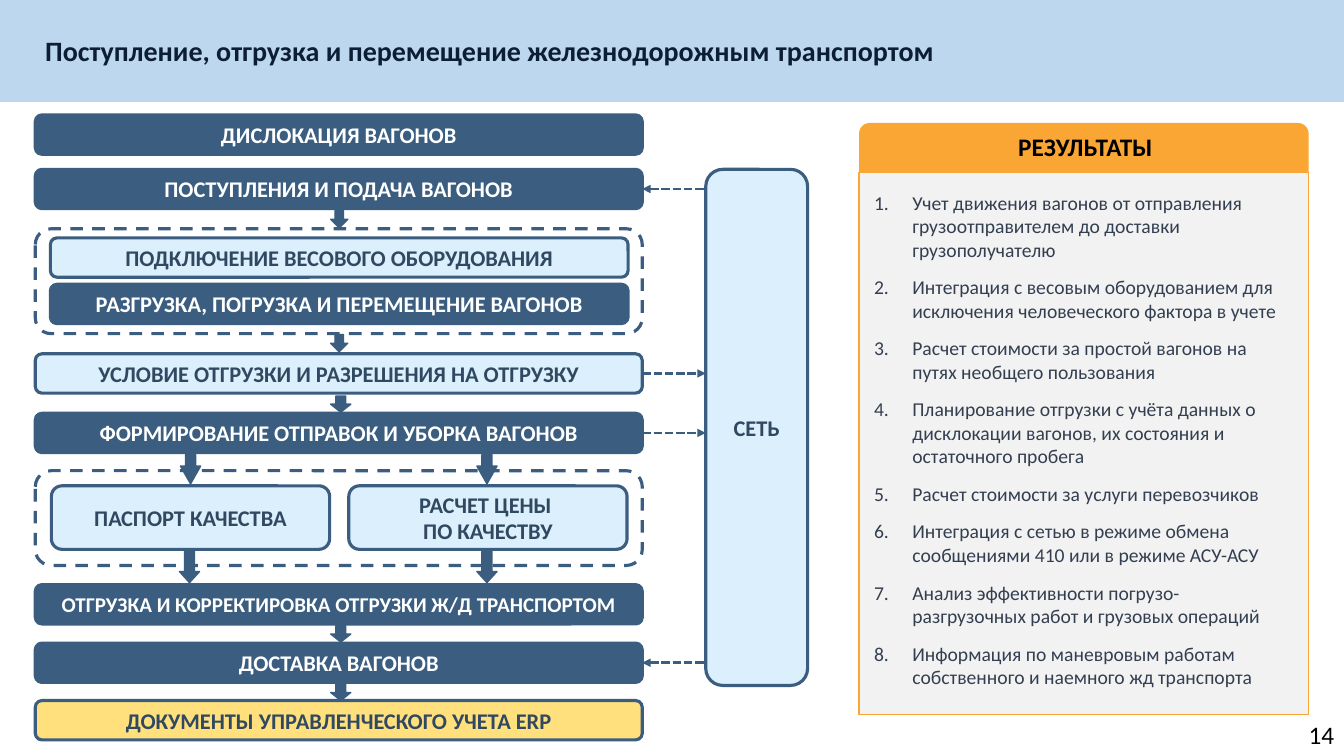
from typing import NamedTuple, Optional

from pptx import Presentation
from pptx.dml.color import RGBColor
from pptx.enum.dml import MSO_LINE
from pptx.enum.shapes import MSO_CONNECTOR, MSO_SHAPE
from pptx.enum.text import MSO_ANCHOR, PP_ALIGN
from pptx.oxml.ns import qn
from pptx.util import Inches, Pt
from lxml.etree import SubElement

NAVY, PALE, YELLOW, ORANGE = "3A5D80", "DBF0FC", "FFE07D", "FAA634"
WHITE, BLACK, SLATE = "FFFFFF", "000000", "304961"
FULL_X, FULL_W = 0.35, 6.02
INNER_X, INNER_W = 0.5, 5.73
BAR_H = 0.39


class Step(NamedTuple):
    text: str
    y: float
    fill: str = NAVY
    x: float = FULL_X
    w: float = FULL_W
    h: float = BAR_H
    size: float = 16
    link: str = ""  # which end of the exchange line has the arrowhead


class Arrow(NamedTuple):
    x: float
    y: float
    w: float
    h: float
    head: float = 0.5


class Frame(NamedTuple):
    y: float
    h: float
    radius: float


STEPS = [
    Step("ДИСЛОКАЦИЯ ВАГОНОВ", 1.14),
    Step("ПОСТУПЛЕНИЯ И ПОДАЧА ВАГОНОВ", 1.68, link="headEnd"),
    Step("ПОДКЛЮЧЕНИЕ ВЕСОВОГО ОБОРУДОВАНИЯ", 2.36, PALE, INNER_X, INNER_W),
    Step("РАЗГРУЗКА, ПОГРУЗКА И ПЕРЕМЕЩЕНИЕ ВАГОНОВ", 2.82, NAVY, INNER_X, INNER_W),
    Step("УСЛОВИЕ ОТГРУЗКИ И РАЗРЕШЕНИЯ НА ОТГРУЗКУ", 3.51, PALE, link="tailEnd"),
    Step("ФОРМИРОВАНИЕ ОТПРАВОК И УБОРКА ВАГОНОВ", 4.1, link="tailEnd"),
    Step("ПАСПОРТ КАЧЕСТВА", 4.82, PALE, 0.51, 2.76, 0.63),
    Step("РАСЧЕТ ЦЕНЫ \nПО КАЧЕСТВУ", 4.82, PALE, 3.46, 2.76, 0.63),
    Step("ОТГРУЗКА И КОРРЕКТИРОВКА ОТГРУЗКИ Ж/Д ТРАНСПОРТОМ", 5.8, size=15),
    Step("ДОСТАВКА ВАГОНОВ", 6.38, link="headEnd"),
    Step("ДОКУМЕНТЫ УПРАВЛЕНЧЕСКОГО УЧЕТА ERP", 6.95, YELLOW),
]
EXCHANGE = Step("СЕТЬ", 1.68, PALE, 7, 1.01, 5.12)
FRAMES = [Frame(2.27, 1.04, 0.15), Frame(4.67, 0.94, 0.17)]
ARROWS = [
    *(Arrow(3.28, y, 0.17, 0.17) for y in (2.09, 3.32)),
    *(Arrow(3.28, y, 0.2, 0.16) for y in (3.93, 6.21, 6.79)),
    *(Arrow(x, 4.51, 0.2, 0.29, 0.88) for x in (1.79, 4.73)),
    *(Arrow(x, 5.47, 0.2, 0.31, 0.55) for x in (1.78, 4.73)),
]
RESULTS = [
    "Учет движения вагонов от отправления грузоотправителем до доставки грузополучателю",
    "Интеграция с весовым оборудованием для исключения человеческого фактора в учете",
    "Расчет стоимости за простой вагонов на путях необщего пользования",
    "Планирование отгрузки с учёта данных о дисклокации вагонов, их состояния и остаточного пробега",
    "Расчет стоимости за услуги перевозчиков",
    "Интеграция с сетью в режиме обмена сообщениями 410 или в режиме АСУ-АСУ",
    "Анализ эффективности погрузо-разгрузочных работ и грузовых операций",
    "Информация по маневровым работам собственного и наемного жд транспорта",
]


def rgb(color: str) -> RGBColor:
    return RGBColor.from_string(color)


def write(p, text: str, size: float, color: str, bold: bool = False,
          align: PP_ALIGN = PP_ALIGN.LEFT) -> None:
    p.text = text
    p.alignment = align
    for r in p.runs:
        for name, value in {"name": "Calibri", "size": Pt(size), "bold": bold}.items():
            setattr(r.font, name, value)
        r.font.color.rgb = rgb(color)


def add_box(s, kind: MSO_SHAPE, x: float, y: float, w: float, h: float,
            fill: Optional[str] = None, line: Optional[str] = None, weight: float = 2.25):
    sp = s.shapes.add_shape(kind, Inches(x), Inches(y), Inches(w), Inches(h))
    sp.shadow.inherit = False
    if fill:
        sp.fill.solid()
        sp.fill.fore_color.rgb = rgb(fill)
    else:
        sp.fill.background()
    if line:
        sp.line.color.rgb = rgb(line)
        sp.line.width = Pt(weight)
    else:
        sp.line.fill.background()
    return sp


def add_text(s, x: float, y: float, w: float, h: float):
    tf = s.shapes.add_textbox(Inches(x), Inches(y), Inches(w), Inches(h)).text_frame
    tf.word_wrap = True
    return tf


def add_step(s, step: Step):
    sp = add_box(s, MSO_SHAPE.ROUNDED_RECTANGLE, step.x, step.y, step.w, step.h,
                 step.fill, NAVY)
    tf = sp.text_frame
    tf.word_wrap = True
    tf.vertical_anchor = MSO_ANCHOR.MIDDLE
    color = WHITE if step.fill == NAVY else SLATE
    write(tf.paragraphs[0], step.text, step.size, color, True, PP_ALIGN.CENTER)
    return sp


def add_link(s, bar, step: Step) -> None:
    """Join a step to the exchange system with a dashed arrow."""
    y = Inches(step.y + step.h / 2)
    line = s.shapes.add_connector(MSO_CONNECTOR.STRAIGHT, Inches(step.x + step.w), y,
                                  Inches(EXCHANGE.x), y)
    line.begin_connect(bar, 3)
    line.line.color.rgb = rgb(NAVY)
    line.line.width = Pt(2)
    line.line.dash_style = MSO_LINE.SQUARE_DOT
    SubElement(line.line._get_or_add_ln(), qn(f"a:{step.link}"), type="triangle")
    SubElement(line._element.spPr, qn("a:effectLst"))


def add_flow(s) -> None:
    for frame in FRAMES:
        sp = add_box(s, MSO_SHAPE.ROUNDED_RECTANGLE, FULL_X, frame.y, FULL_W, frame.h,
                     line=NAVY)
        sp.adjustments[0] = frame.radius
        sp.line.dash_style = MSO_LINE.DASH
    add_step(s, EXCHANGE)
    for step in STEPS:
        bar = add_step(s, step)
        if step.link:
            add_link(s, bar, step)
    for a in ARROWS:
        sp = add_box(s, MSO_SHAPE.DOWN_ARROW, a.x, a.y, a.w, a.h, NAVY, NAVY, 1)
        sp.adjustments[1] = a.head


def add_results(s) -> None:
    add_box(s, MSO_SHAPE.ROUNDED_RECTANGLE, 8.52, 1.22, 4.46, 0.64, ORANGE)
    add_box(s, MSO_SHAPE.RECTANGLE, 8.52, 1.71, 4.46, 5.38, "F2F2F2", ORANGE, 1)
    tf = add_text(s, 8.55, 1.25, 4.43, 0.4)
    write(tf.paragraphs[0], "РЕЗУЛЬТАТЫ", 18, BLACK, True, PP_ALIGN.CENTER)
    tf = add_text(s, 8.28, 1.84, 4.59, 5.09)
    for i, result in enumerate(RESULTS):
        p = tf.add_paragraph() if i else tf.paragraphs[0]
        write(p, result, 14, "333F50")
        p.space_after = Pt(10)
        pPr = p._p.get_or_add_pPr()
        for name, value in {"marL": 0.67, "indent": -0.38}.items():
            pPr.set(name, str(Inches(value)))
        SubElement(pPr, qn("a:buFont"), typeface="+mj-lt")
        SubElement(pPr, qn("a:buAutoNum"), type="arabicPeriod")


def main() -> None:
    prs = Presentation()
    prs.slide_width, prs.slide_height = Inches(13.33), Inches(7.5)
    s = prs.slides.add_slide(prs.slide_layouts[6])
    add_box(s, MSO_SHAPE.RECTANGLE, 0, 0, 13.33, 1.01, "BDD7EE")
    title = add_text(s, 0.35, 0.28, 9.56, 0.44)
    write(title.paragraphs[0],
          "Поступление, отгрузка и перемещение железнодорожным транспортом",
          20, "0C1E34", True)
    add_flow(s)
    add_results(s)
    number = add_text(s, 10.33, 7.09, 3, 0.4)
    write(number.paragraphs[0], "14", 18, BLACK, align=PP_ALIGN.RIGHT)
    prs.save("out.pptx")


if __name__ == "__main__":
    main()
